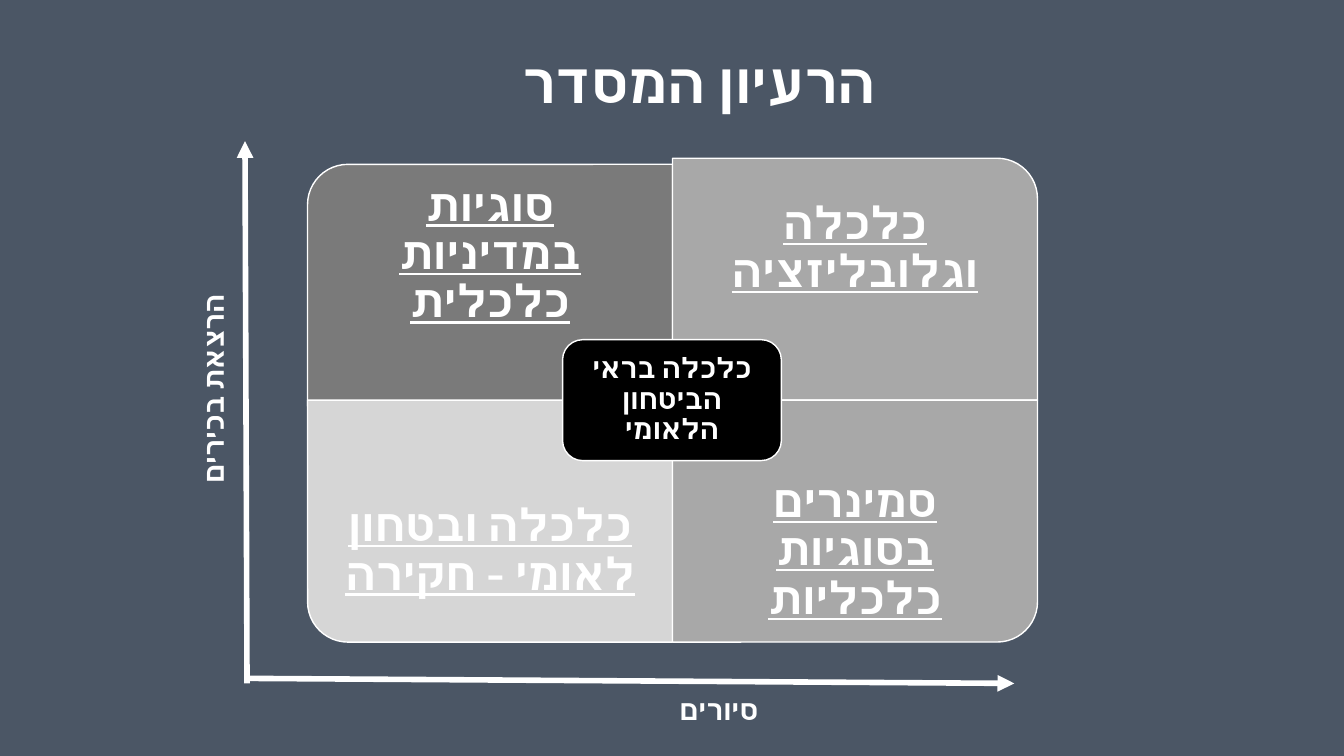
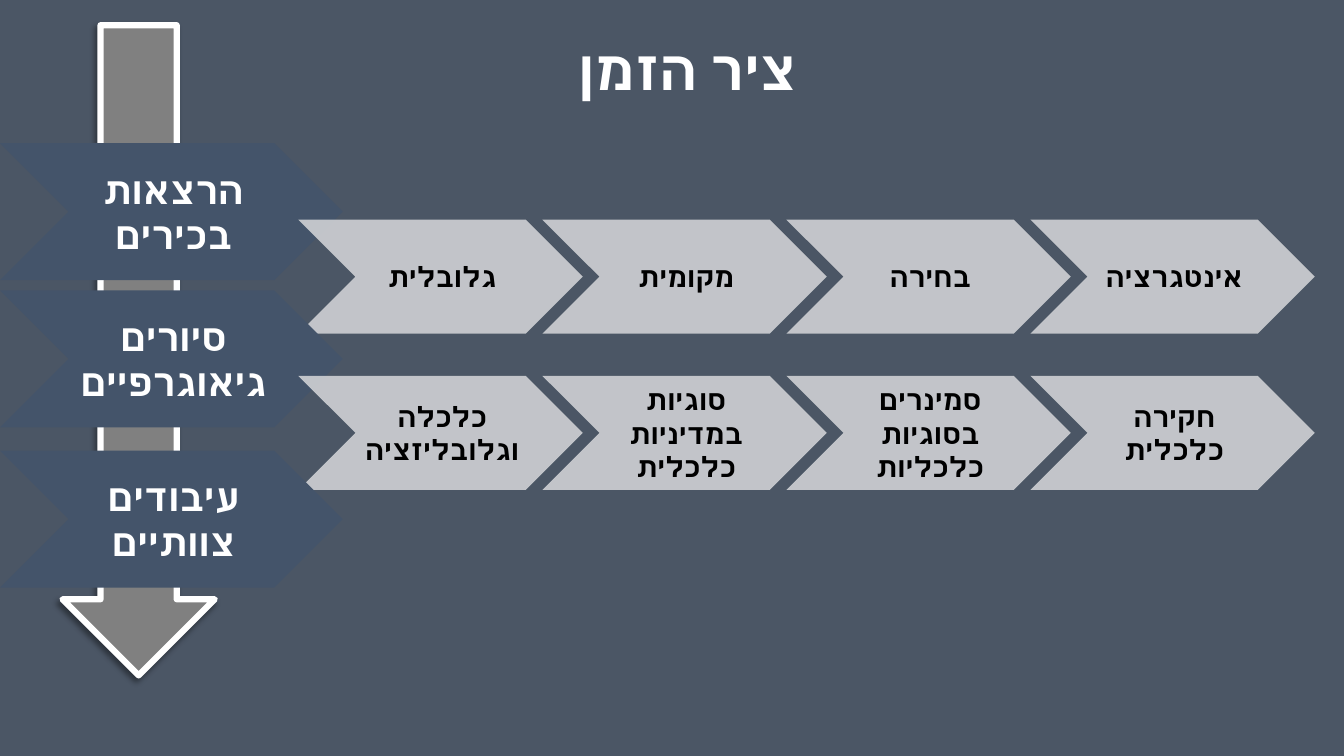
"""Build two right-to-left slides: an organising matrix and a timeline."""
from lxml import etree
from pptx import Presentation
from pptx.dml.color import RGBColor
from pptx.enum.shapes import MSO_CONNECTOR, MSO_SHAPE as SHAPE
from pptx.enum.text import MSO_ANCHOR, MSO_AUTO_SIZE, PP_ALIGN
from pptx.oxml import parse_xml
from pptx.oxml.ns import nsdecls, qn
from pptx.util import Inches, Pt

FONT = "Cabin"
BACKGROUND, WHITE, BLACK = "4B5665", "FFFFFF", "000000"
NAVY, SILVER, ARROW_GRAY = "44546A", "CFD1D4", "808080"


def add_block(slide, kind, box, fill, line=None, line_width=1):
    shape = slide.shapes.add_shape(kind, *map(Inches, box))
    shape.shadow.inherit = False
    shape.fill.solid()
    shape.fill.fore_color.rgb = RGBColor.from_string(fill)
    if line:
        shape.line.color.rgb = RGBColor.from_string(line)
        shape.line.width = Pt(line_width)
    else:
        shape.line.fill.background()
    return shape


def write_text(shape, text, size, color=WHITE, align=PP_ALIGN.CENTER,
               insets=(0.1, 0.05, 0.1, 0.05), spacing=0.9, underline=None, wrap=True):
    frame = shape.text_frame
    frame.word_wrap = wrap
    frame.auto_size = MSO_AUTO_SIZE.NONE if wrap else MSO_AUTO_SIZE.SHAPE_TO_FIT_TEXT
    frame.vertical_anchor = MSO_ANCHOR.MIDDLE
    (frame.margin_left, frame.margin_top,
     frame.margin_right, frame.margin_bottom) = map(Inches, insets)
    paragraph = frame.paragraphs[0]
    paragraph.text = text
    paragraph.alignment = align
    paragraph.line_spacing = spacing
    font = paragraph.font
    font.name, font.size, font.bold, font.underline = FONT, Pt(size), True, underline
    font.color.rgb = RGBColor.from_string(color)
    properties = paragraph._p.get_or_add_pPr()
    properties.set("rtl", "1")
    etree.SubElement(properties.find(qn("a:defRPr")), qn("a:cs"), typeface=FONT)


presentation = Presentation()
presentation.slide_width, presentation.slide_height = Inches(13.33), Inches(7.5)

slides = []
for title, title_box in [
    ("הרעיון המסדר", (4.56, 0.49, 4.23, 0.71)),
    ("ציר הזמן", (5.41, 0.36, 2.6, 0.71)),
]:
    slide = presentation.slides.add_slide(presentation.slide_layouts[6])
    slide.background.fill.solid()
    slide.background.fill.fore_color.rgb = RGBColor.from_string(BACKGROUND)
    title_shape = slide.shapes.add_textbox(*map(Inches, title_box))
    write_text(title_shape, title, 40, align=PP_ALIGN.RIGHT, wrap=False)
    slides.append(slide)
matrix_slide, timeline_slide = slides

QUADRANT_WIDTH, QUADRANT_HEIGHT, CAPTION_HEIGHT = 3.62, 2.4, 1.8
LEFT, CENTER, MIDDLE = 3.05, 6.67, 3.97
for left, top, caption_top, rotation, fill, text in [
    (LEFT, 1.63, 1.63, 270, "7A7A7A", "סוגיות במדיניות כלכלית"),
    (CENTER, 1.57, 1.57, 0, "A8A8A8", "כלכלה וגלובליזציה"),
    (LEFT, MIDDLE, 4.57, 180, "D6D6D6", "כלכלה ובטחון לאומי - חקירה"),
    (CENTER, MIDDLE, 4.57, 90, "A8A8A8", "סמינרים בסוגיות כלכליות"),
]:
    width, height = QUADRANT_WIDTH, QUADRANT_HEIGHT
    if rotation in (90, 270):
        width, height = height, width
    box = (left + (QUADRANT_WIDTH - width) / 2, top + (QUADRANT_HEIGHT - height) / 2, width, height)
    quadrant = add_block(matrix_slide, SHAPE.ROUND_1_RECTANGLE, box, fill, WHITE)
    quadrant.rotation = rotation
    caption = matrix_slide.shapes.add_textbox(
        *map(Inches, (left, caption_top, QUADRANT_WIDTH, CAPTION_HEIGHT)))
    write_text(caption, text, 32, insets=(0.25,) * 4, underline=True)

core = add_block(matrix_slide, SHAPE.ROUNDED_RECTANGLE, (5.58, 3.37, 2.17, 1.2), BLACK, WHITE)
write_text(core, "כלכלה בראי הביטחון הלאומי", 20, insets=(0.08,) * 4)

for ends in [(2.45, 6.73, 10.06, 6.78), (2.45, 6.78, 2.43, 1.4)]:
    axis = matrix_slide.shapes.add_connector(MSO_CONNECTOR.STRAIGHT, *map(Inches, ends))
    axis.line.color.rgb = RGBColor.from_string(WHITE)
    axis.line.width = Pt(4)
    axis_properties = axis._element.spPr
    etree.SubElement(axis_properties.find(qn("a:ln")), qn("a:tailEnd"), type="triangle")
    etree.SubElement(axis_properties, qn("a:effectLst"))

for text, box, rotation in [
    ("סיורים", (6.51, 6.86, 1.11, 0.4), 0),
    ("הרצאת בכירים", (0.99, 3.76, 2.28, 0.4), 270),
]:
    axis_label = matrix_slide.shapes.add_textbox(*map(Inches, box))
    axis_label.rotation = rotation
    write_text(axis_label, text, 20, align=PP_ALIGN.RIGHT, wrap=False)

time_arrow = add_block(timeline_slide, SHAPE.DOWN_ARROW, (0.62, 0.25, 1.51, 6.45),
                       ARROW_GRAY, WHITE, 4.5)
arrow_properties = time_arrow._element.spPr
arrow_properties.remove(arrow_properties.find(qn("a:effectLst")))
arrow_properties.append(parse_xml(
    f'<a:effectLst {nsdecls("a")}><a:outerShdw blurRad="{Pt(4)}" dist="{Pt(3)}" dir="8100000" '
    f'rotWithShape="0"><a:srgbClr val="{BLACK}"><a:alpha val="40000"/></a:srgbClr>'
    '</a:outerShdw></a:effectLst>'))

STEP_LEFT, STEP_PITCH = 2.96, 2.42
for stage, stage_top, step_top, steps in [
    ("הרצאות בכירים", 1.42, 2.18, ["גלובלית", "מקומית", "בחירה", "אינטגרציה"]),
    ("סיורים גיאוגרפיים", 2.88, 3.73,
     ["כלכלה וגלובליזציה", "סוגיות במדיניות כלכלית", "סמינרים בסוגיות כלכליות", "חקירה כלכלית"]),
    ("עיבודים צוותיים", 4.47, None, []),
]:
    stage_chevron = add_block(timeline_slide, SHAPE.CHEVRON, (0, stage_top, 3.4, 1.36), NAVY)
    write_text(stage_chevron, stage, 27, insets=(0.04, 0.02, 0, 0.02), spacing=1.0)
    for index, step in enumerate(steps):
        box = (STEP_LEFT + index * STEP_PITCH, step_top, 2.82, 1.13)
        step_chevron = add_block(timeline_slide, SHAPE.CHEVRON, box, SILVER)
        color_element = step_chevron._element.spPr.find(qn("a:solidFill"))[0]
        etree.SubElement(color_element, qn("a:alpha"), val="90000")
        write_text(step_chevron, step, 20, BLACK, insets=(0.03, 0.01, 0, 0.01), spacing=1.0)

presentation.save("out.pptx")
